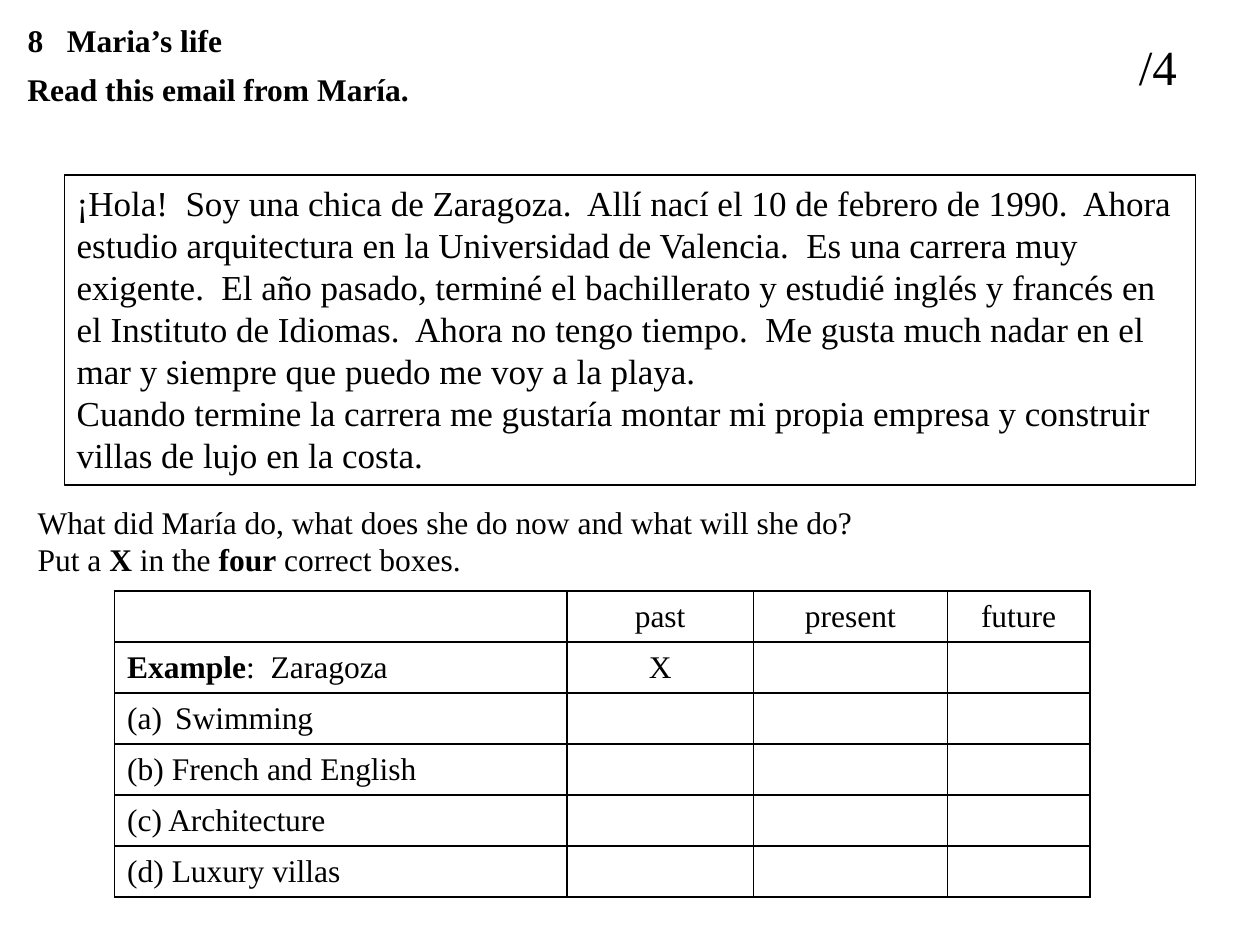
from dataclasses import dataclass

from lxml.etree import SubElement
from pptx import Presentation
from pptx.dml.color import RGBColor
from pptx.enum.shapes import MSO_SHAPE
from pptx.enum.text import MSO_ANCHOR, MSO_AUTO_SIZE, PP_ALIGN
from pptx.oxml.ns import qn
from pptx.util import Inches, Pt

FONT = "Times New Roman"
COLORS = {"ink": "000000", "paper": "FFFFFF"}
INK = RGBColor.from_string(COLORS["ink"])


@dataclass(frozen=True)
class Passage:
    left: float
    top: float
    width: float
    height: float
    text: str
    size: int = 18
    framed: bool = False


PASSAGES = [
    Passage(0.12, 0.12, 4.02, 0.4, "**8   Maria’s life**"),
    Passage(0.12, 0.51, 6.77, 0.4, "**Read this email from María.**"),
    Passage(
        0.51, 1.39, 8.98, 2.46,
        "¡Hola!  Soy una chica de Zaragoza.  Allí nací el 10 de febrero de 1990.  "
        "Ahora estudio arquitectura en la Universidad de Valencia.  Es una carrera "
        "muy exigente.  El año pasado, terminé el bachillerato y estudié inglés y "
        "francés en el Instituto de Idiomas.  Ahora no tengo tiempo.  Me gusta much "
        "nadar en el mar y siempre que puedo me voy a la playa.\n"
        "Cuando termine la carrera me gustaría montar mi propia empresa y construir "
        "villas de lujo en la costa.",
        size=20, framed=True,
    ),
    Passage(8.94, 0.24, 0.87, 0.57, "/4", size=28),
    Passage(
        0.2, 3.94, 6.77, 0.71,
        "What did María do, what does she do now and what will she do?\n"
        "Put a **X **in the **four** correct boxes.",
    ),
]

COLUMN_WIDTHS = [3.59, 1.48, 1.54, 1.13]
TABLE_HEIGHT = 2.43
ANSWER_ROWS = [
    ["", "past", "present", "future"],
    ["**Example**:  Zaragoza", "X", "", ""],
    ["Swimming", "", "", ""],
    ["(b) French and English", "", "", ""],
    ["(c) Architecture", "", "", ""],
    ["(d) Luxury villas", "", "", ""],
]
NUMBERED_ROW = 2


def write(paragraph, text: str, size: int) -> None:
    """Write text in which ** switches bold on and off and a newline breaks the line."""
    for part_number, part in enumerate(text.split("**")):
        for line_number, line in enumerate(part.split("\n")):
            if line_number:
                paragraph.add_line_break()
            if line:
                run = paragraph.add_run()
                run.text = line
                run.font.name = FONT
                run.font.size = Pt(size)
                run.font.bold = part_number % 2 == 1
                run.font.color.rgb = INK


def add_passage(slide, passage: Passage) -> None:
    place = [Inches(n) for n in (passage.left, passage.top, passage.width, passage.height)]
    if passage.framed:
        box = slide.shapes.add_shape(MSO_SHAPE.RECTANGLE, *place)
        box.shadow.inherit = False
        box.fill.background()
        box.line.color.rgb = INK
        box.line.width = Pt(0.75)
    else:
        box = slide.shapes.add_textbox(*place)
    frame = box.text_frame
    frame.word_wrap = True
    frame.auto_size = MSO_AUTO_SIZE.SHAPE_TO_FIT_TEXT
    frame.vertical_anchor = MSO_ANCHOR.TOP
    frame.paragraphs[0].alignment = PP_ALIGN.LEFT
    write(frame.paragraphs[0], passage.text, passage.size)


def set_borders(cell) -> None:
    properties = cell._tc.get_or_add_tcPr()
    for position, side in enumerate(("lnL", "lnR", "lnT", "lnB")):
        line = properties.makeelement(qn(f"a:{side}"), {"w": str(Pt(1))})
        fill = SubElement(line, qn("a:solidFill"))
        SubElement(fill, qn("a:srgbClr"), val=COLORS["ink"])
        properties.insert(position, line)


def number_paragraph(paragraph) -> None:
    """Give the paragraph an automatic (a) with a hanging indent."""
    properties = paragraph._p.get_or_add_pPr()
    properties.set("marL", str(Inches(0.38)))
    properties.set("indent", str(Inches(-0.38)))
    SubElement(properties, qn("a:buFont"), typeface=FONT)
    SubElement(properties, qn("a:buAutoNum"), type="alphaLcParenBoth")


def add_answer_table(slide) -> None:
    table = slide.shapes.add_table(
        len(ANSWER_ROWS), len(COLUMN_WIDTHS), Inches(0.91), Inches(4.69),
        Inches(sum(COLUMN_WIDTHS)), Inches(TABLE_HEIGHT),
    ).table
    table.first_row = False
    table.horz_banding = False
    for column, width in zip(table.columns, COLUMN_WIDTHS):
        column.width = Inches(width)
    for row_index, answers in enumerate(ANSWER_ROWS):
        for column_index, answer in enumerate(answers):
            cell = table.cell(row_index, column_index)
            cell.fill.background()
            cell.vertical_anchor = MSO_ANCHOR.MIDDLE
            set_borders(cell)
            paragraph = cell.text_frame.paragraphs[0]
            paragraph.alignment = PP_ALIGN.CENTER if column_index else PP_ALIGN.LEFT
            write(paragraph, answer, 18)
    number_paragraph(table.cell(NUMBERED_ROW, 0).text_frame.paragraphs[0])


def main() -> None:
    presentation = Presentation()
    presentation.slide_width = Inches(10)
    presentation.slide_height = Inches(7.5)
    slide = presentation.slides.add_slide(presentation.slide_layouts[6])
    slide.background.fill.solid()
    slide.background.fill.fore_color.rgb = RGBColor.from_string(COLORS["paper"])
    for passage in PASSAGES:
        add_passage(slide, passage)
    add_answer_table(slide)
    presentation.save("out.pptx")


if __name__ == "__main__":
    main()
